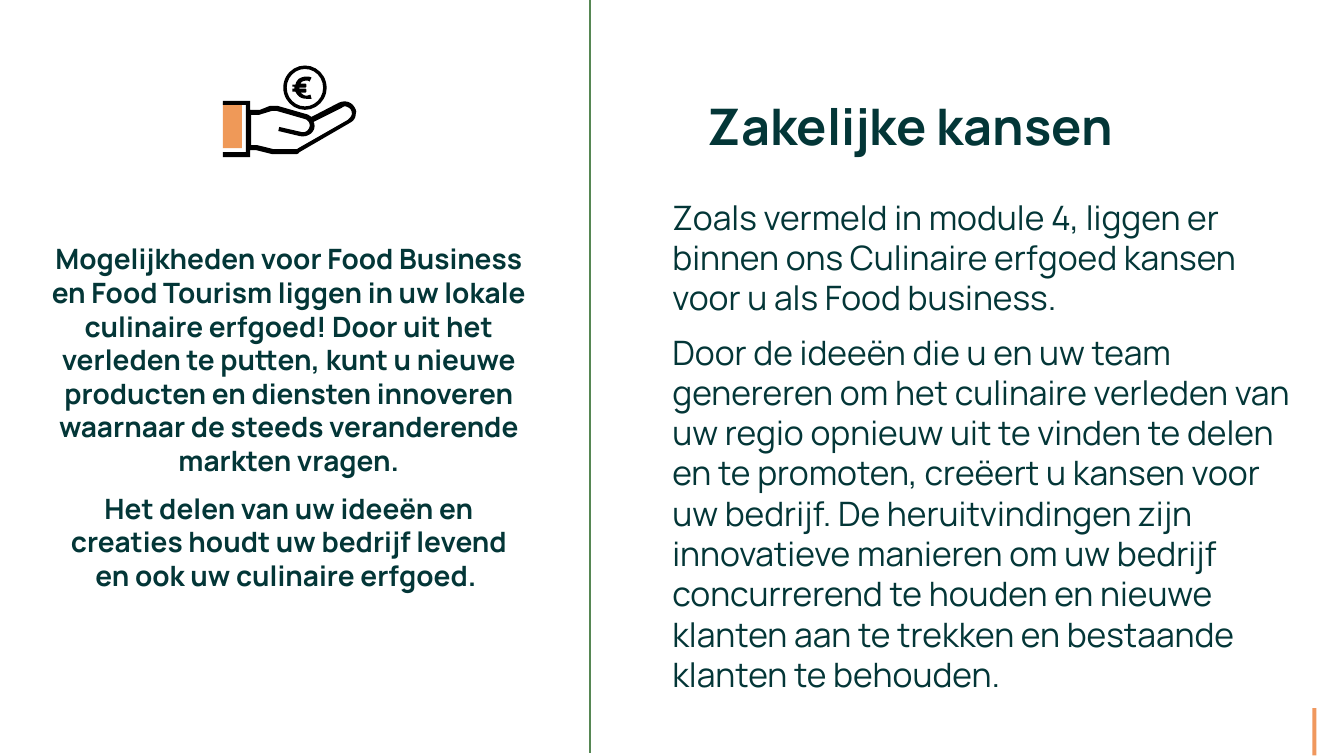
"""Build the slide about business opportunities in culinary heritage."""
from lxml import etree
from pptx import Presentation
from pptx import util as u
from pptx.dml.color import RGBColor
from pptx.enum import shapes, text
from pptx.oxml.ns import qn

COLORS = {"text": "033637", "divider": "568754", "accent": "F0985E",
          "sleeve": "EF9958", "icon": "000000"}
LEFT, CENTER = text.PP_ALIGN.LEFT, text.PP_ALIGN.CENTER
UNITS_PER_INCH = 1000

presentation = Presentation()
presentation.slide_width = u.Inches(13.33)
presentation.slide_height = u.Inches(7.5)
slide = presentation.slides.add_slide(presentation.slide_layouts[6])


def paint(shape, color):
    """Give a shape a plain fill without line or shadow."""
    shape.fill.solid()
    shape.fill.fore_color.rgb = RGBColor.from_string(COLORS[color])
    shape.line.fill.background()
    shape.shadow.inherit = False


def flatten(contour, steps=6):
    """Turn points (x, y) and cubic curves (three points) into a polyline."""
    points = []
    for item in contour:
        if len(item) == 2:
            points.append(item)
            continue
        x0, y0 = points[-1]
        x1, y1, x2, y2, x3, y3 = item
        for step in range(1, steps + 1):
            t = step / steps
            a, b, c, d = (1 - t) ** 3, 3 * t * (1 - t) ** 2, 3 * t * t * (1 - t), t ** 3
            points.append((a * x0 + b * x1 + c * x2 + d * x3,
                           a * y0 + b * y1 + c * y2 + d * y3))
    return [(x * UNITS_PER_INCH, y * UNITS_PER_INCH) for x, y in points]


divider = slide.shapes.add_connector(
    shapes.MSO_CONNECTOR.STRAIGHT,
    u.Inches(5.85), u.Inches(-0.03), u.Inches(5.85), u.Inches(7.47))
divider.line.color.rgb = RGBColor.from_string(COLORS["divider"])
divider.line.width = u.Pt(1)
etree.SubElement(divider._element.spPr, qn("a:effectLst"))

RECTANGLE, DONUT = shapes.MSO_SHAPE.RECTANGLE, shapes.MSO_SHAPE.DONUT
corner_bar = slide.shapes.add_shape(
    RECTANGLE, u.Inches(12.8), u.Inches(7.24), u.Inches(0.47), u.Inches(0.04))
corner_bar.rotation = 90
paint(corner_bar, "accent")

text_blocks = [
    ((6.57, 1.9, 6.45, 4.07), 24, False, LEFT, 1.0, [
        "Zoals vermeld in module 4, liggen er binnen ons Culinaire erfgoed kansen "
        "voor u als Food business.",
        "Door de ideeën die u en uw team genereren om het culinaire verleden van uw "
        "regio opnieuw uit te vinden te delen en te promoten, creëert u kansen voor "
        "uw bedrijf. De heruitvindingen zijn innovatieve manieren om uw bedrijf "
        "concurrerend te houden en nieuwe klanten aan te trekken en bestaande "
        "klanten te behouden."]),
    ((6.92, 0.77, 5.64, 0.94), 36, True, LEFT, 1.2, ["Zakelijke kansen"]),
    ((0.41, 2.35, 4.91, 3.76), 20, True, CENTER, 1.0, [
        "Mogelijkheden voor Food Business en Food Tourism liggen in uw lokale "
        "culinaire erfgoed! Door uit het verleden te putten, kunt u nieuwe producten "
        "en diensten innoveren waarnaar de steeds veranderende markten vragen.",
        "Het delen van uw ideeën en creaties houdt uw bedrijf levend en ook uw "
        "culinaire erfgoed. "]),
]
for box, size, bold, alignment, line_spacing, paragraphs in text_blocks:
    frame = slide.shapes.add_textbox(*map(u.Inches, box)).text_frame
    frame.word_wrap = True
    for index, wording in enumerate(paragraphs):
        paragraph = frame.add_paragraph() if index else frame.paragraphs[0]
        paragraph.alignment = alignment
        paragraph.line_spacing = line_spacing
        if index:
            paragraph.space_before = u.Pt(10)
        run = paragraph.add_run()
        run.text = wording
        run.font.name = "Manrope"
        run.font.size = u.Pt(size)
        run.font.bold = bold
        run.font.color.rgb = RGBColor.from_string(COLORS["text"])

sleeve = slide.shapes.add_shape(
    RECTANGLE, u.Inches(2.21), u.Inches(1.02), u.Inches(0.19), u.Inches(0.45))
paint(sleeve, "sleeve")

hand_inside = [
    (3.45, 1.19), (2.96, 1.47), (2.95, 1.48, 2.94, 1.48, 2.92, 1.48), (2.73, 1.48),
    (2.71, 1.48), (2.55, 1.44), (2.49, 1.44), (2.49, 1.14), (2.57, 1.14),
    (2.6, 1.13), (2.7, 1.1), (2.71, 1.1, 2.72, 1.1, 2.74, 1.1), (3.02, 1.18),
    (3.06, 1.19, 3.08, 1.23, 3.07, 1.26), (3.06, 1.3, 3.02, 1.32, 2.99, 1.31),
    (2.77, 1.26), (2.76, 1.3), (2.97, 1.35), (3.01, 1.36, 3.06, 1.35, 3.09, 1.32),
    (3.12, 1.29, 3.13, 1.25, 3.11, 1.21), (3.39, 1.07),
    (3.41, 1.05, 3.43, 1.05, 3.46, 1.07), (3.48, 1.08, 3.49, 1.1, 3.49, 1.13),
    (3.49, 1.15, 3.47, 1.17, 3.45, 1.19)]
hand_outside = [
    (3.52, 1.07), (3.49, 1.01, 3.42, 0.99, 3.36, 1.02), (3.09, 1.16),
    (3.07, 1.15, 3.05, 1.13, 3.03, 1.13), (2.75, 1.05),
    (2.72, 1.05, 2.7, 1.05, 2.68, 1.05), (2.58, 1.09), (2.48, 1.09), (2.48, 1),
    (2.21, 1), (2.21, 1.04), (2.44, 1.04), (2.44, 1.51), (2.21, 1.51), (2.21, 1.56),
    (2.48, 1.56), (2.48, 1.49), (2.54, 1.49), (2.7, 1.53), (2.92, 1.53),
    (2.94, 1.53, 2.96, 1.53, 2.97, 1.51), (3.47, 1.22),
    (3.51, 1.2, 3.53, 1.17, 3.53, 1.12), (3.54, 1.11, 3.53, 1.09, 3.52, 1.07)]
euro_sign = [
    (2.9, 0.84), (2.93, 0.84), (2.94, 0.79, 2.98, 0.76, 3.04, 0.76),
    (3.06, 0.76, 3.07, 0.76, 3.09, 0.77), (3.07, 0.81),
    (3.06, 0.8, 3.05, 0.8, 3.04, 0.8), (3.01, 0.8, 2.99, 0.81, 2.98, 0.83),
    (3.03, 0.83), (3.04, 0.84), (3.04, 0.86), (3.03, 0.87), (2.97, 0.87),
    (2.97, 0.88), (3.03, 0.88), (3.04, 0.89), (3.04, 0.91), (3.03, 0.92),
    (2.98, 0.92), (3, 0.93, 3.01, 0.95, 3.04, 0.95),
    (3.05, 0.95, 3.07, 0.94, 3.08, 0.94), (3.09, 0.98),
    (3.08, 0.98, 3.06, 0.98, 3.04, 0.98), (2.98, 0.98, 2.95, 0.95, 2.93, 0.91),
    (2.9, 0.91), (2.9, 0.88), (2.92, 0.88), (2.92, 0.86), (2.9, 0.86)]
for contours in ([hand_inside, hand_outside], [euro_sign]):
    outlines = [flatten(contour) for contour in contours]
    builder = slide.shapes.build_freeform(
        *outlines[0][0], scale=u.Inches(1) / UNITS_PER_INCH)
    builder.add_line_segments(outlines[0][1:])
    for outline in outlines[1:]:
        builder.move_to(*outline[0])
        builder.add_line_segments(outline[1:])
    paint(builder.convert_to_shape(), "icon")

coin = slide.shapes.add_shape(
    DONUT, u.Inches(2.81), u.Inches(0.65), u.Inches(0.43), u.Inches(0.44))
coin.adjustments[0] = 0.08
paint(coin, "icon")

presentation.save("out.pptx")
